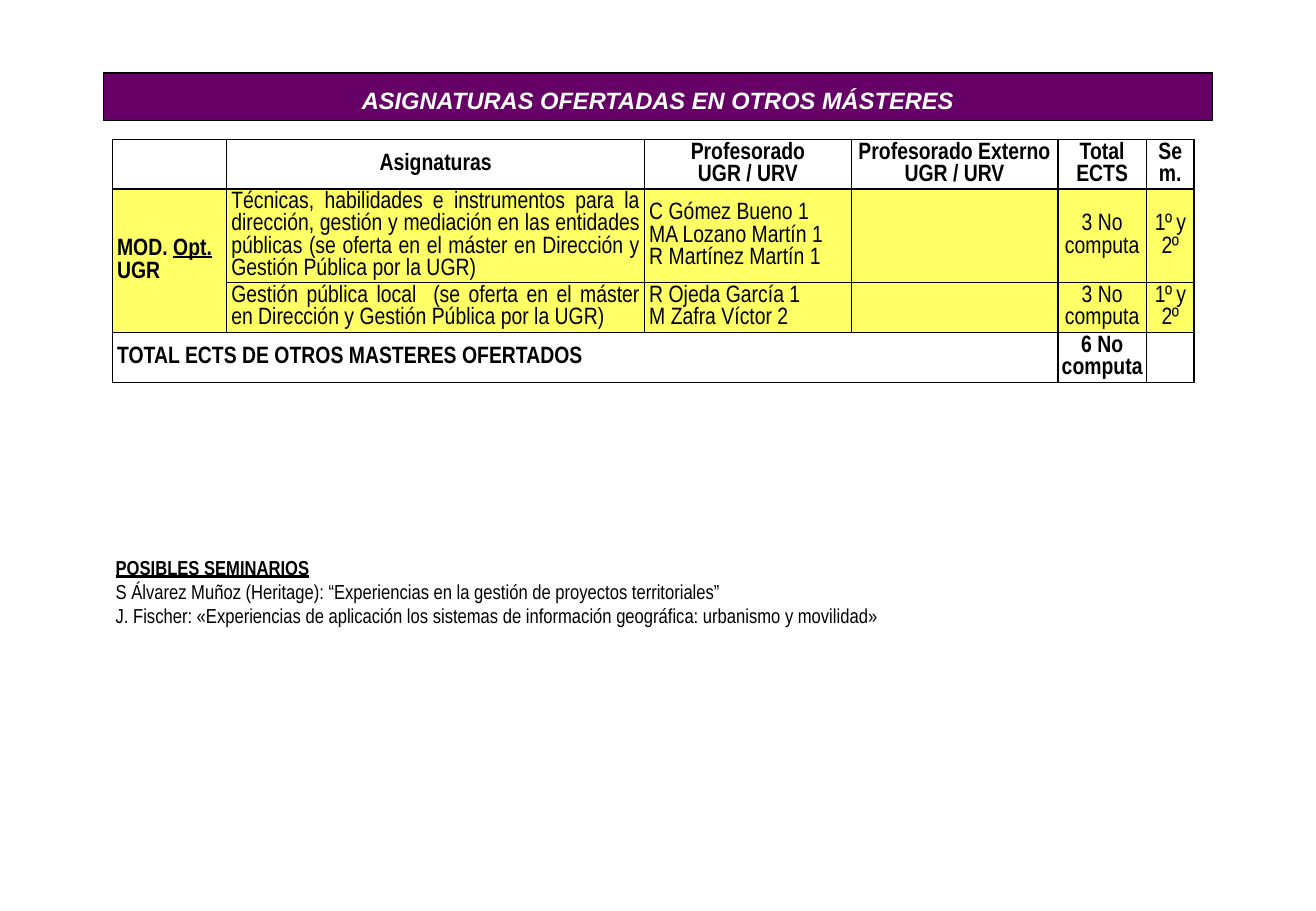
from lxml.etree import SubElement
from pptx import Presentation
from pptx.dml.color import RGBColor
from pptx.enum.text import MSO_ANCHOR as Anchor, MSO_AUTO_SIZE as AutoSize, PP_ALIGN as Align
from pptx.oxml.ns import qn
from pptx.util import Inches, Pt

PURPLE, YELLOW, BLACK, WHITE = "660066", "FFFF66", "000000", "FFFFFF"
NARROW = "Arial Narrow"
COLUMN_WIDTHS = [0.94, 3.44, 1.7, 1.7, 0.73, 0.39]
ROW_HEIGHTS = [0.41, 0.77, 0.41, 0.41]
CENTERED_COLUMNS = (4, 5)

# Underscores enclose underlined words; line breaks separate paragraphs.
COURSES = [
    ["", "Asignaturas", "Profesorado\nUGR / URV", "Profesorado Externo\nUGR / URV",
     "Total ECTS", "Sem."],
    ["MOD. _Opt._\nUGR",
     "Técnicas, habilidades e instrumentos para la dirección, gestión y mediación en las "
     "entidades públicas (se oferta en el máster en Dirección y Gestión Pública por la UGR)",
     "C Gómez Bueno 1\nMA Lozano Martín 1\nR Martínez Martín 1", "", "3 No computa", "1º y 2º"],
    ["",
     "Gestión pública local  (se oferta en el máster en Dirección y Gestión Pública por la UGR)",
     "R Ojeda García 1\nM Zafra Víctor 2", "", "3 No computa", "1º y 2º"],
    ["TOTAL ECTS DE OTROS MASTERES OFERTADOS", "", "", "", "6 No computa", ""],
]
MERGES = [((1, 0), (2, 0)), ((3, 0), (3, 3))]
SEMINARS = [
    "_POSIBLES SEMINARIOS_",
    "S Álvarez Muñoz (Heritage): “Experiencias en la gestión de proyectos territoriales”",
    "J. Fischer: «Experiencias de aplicación los sistemas de información geográfica: "
    "urbanismo y movilidad»",
]


def rgb(color):
    return RGBColor.from_string(color)


def style_font(font, size, name, color=BLACK, bold=False, italic=False):
    font.size, font.name, font.bold, font.italic = Pt(size), name, bold, italic
    font.color.rgb = rgb(color)


def write(paragraph, text, size, bold=False):
    """Add the text as runs, underlining what stands between underscores."""
    for index, part in enumerate(text.split("_")):
        if part:
            run = paragraph.add_run()
            run.text = part
            style_font(run.font, size, NARROW, bold=bold)
            run.font.underline = index % 2 == 1


def outline(cell):
    properties = cell._tc.get_or_add_tcPr()
    for side in ("a:lnL", "a:lnR", "a:lnT", "a:lnB"):
        line = SubElement(properties, qn(side), w=str(Pt(1)))
        SubElement(SubElement(line, qn("a:solidFill")), qn("a:srgbClr"), val=BLACK)


class CourseSlide:
    def __init__(self, width, height):
        self.deck = Presentation()
        self.deck.slide_width, self.deck.slide_height = Inches(width), Inches(height)
        self.slide = self.deck.slides.add_slide(self.deck.slide_layouts[5])

    def area(self, left, top, width, height):
        """Turn percentages of the slide's size into lengths."""
        across, down = self.deck.slide_width / 100, self.deck.slide_height / 100
        return [int(v) for v in (left * across, top * down, width * across, height * down)]

    def title(self, text, *shares):
        banner = self.slide.shapes.title
        banner.left, banner.top, banner.width, banner.height = self.area(*shares)
        banner.fill.solid()
        banner.fill.fore_color.rgb = rgb(PURPLE)
        banner.line.color.rgb = rgb(BLACK)
        banner.line.width = Pt(0.75)
        frame = banner.text_frame
        frame.text = text
        frame.auto_size, frame.vertical_anchor = AutoSize.NONE, Anchor.BOTTOM
        frame.paragraphs[0].alignment = Align.CENTER
        style_font(frame.paragraphs[0].runs[0].font, 14, "Arial", WHITE, True, True)

    def cell(self, cell, row, column):
        last = len(COURSES) - 1
        outline(cell)
        if 0 < row < last:
            cell.fill.solid()
            cell.fill.fore_color.rgb = rgb(YELLOW)
        else:
            cell.fill.background()
        cell.margin_left = cell.margin_right = Pt(1.4 if (row, column) == (last, 4) else 2.7)
        cell.margin_top = cell.margin_bottom = Pt(1)
        cell.vertical_anchor = Anchor.MIDDLE
        centered = row == 0 or column in CENTERED_COLUMNS
        for index, text in enumerate(COURSES[row][column].split("\n")):
            frame = cell.text_frame
            paragraph = frame.add_paragraph() if index else frame.paragraphs[0]
            paragraph.alignment = Align.CENTER if centered else Align.JUSTIFY
            paragraph.font.size = Pt(14)
            write(paragraph, text, 14, bold=row in (0, last) or column == 0)
            if column == 5 and 0 < row < last:
                paragraph.runs[0].font._element.set("spc", "-30")

    def table(self, *shares):
        table = self.slide.shapes.add_table(
            len(ROW_HEIGHTS), len(COLUMN_WIDTHS), *self.area(*shares)).table
        table.first_row = table.horz_banding = False
        for column, width in zip(table.columns, COLUMN_WIDTHS):
            column.width = Inches(width)
        for row, height in zip(table.rows, ROW_HEIGHTS):
            row.height = Inches(height)
        for row in range(len(ROW_HEIGHTS)):
            for column in range(len(COLUMN_WIDTHS)):
                self.cell(table.cell(row, column), row, column)
        for first, final in MERGES:
            table.cell(*first).merge(table.cell(*final))

    def text(self, lines, *shares):
        frame = self.slide.shapes.add_textbox(*self.area(*shares)).text_frame
        frame.word_wrap, frame.vertical_anchor = True, Anchor.MIDDLE
        for index, line in enumerate(lines):
            paragraph = frame.add_paragraph() if index else frame.paragraphs[0]
            write(paragraph, line, 12, bold=index == 0)


def main():
    page = CourseSlide(10.83, 7.5)
    page.table(8.55, 15.3, 82.2, 26.7)
    page.title("ASIGNATURAS OFERTADAS EN OTROS MÁSTERES", 7.85, 8, 84.3, 5.2)
    page.text(SEMINARS, 7.88, 60.2, 82.83, 9.47)
    page.deck.save("out.pptx")


if __name__ == "__main__":
    main()
